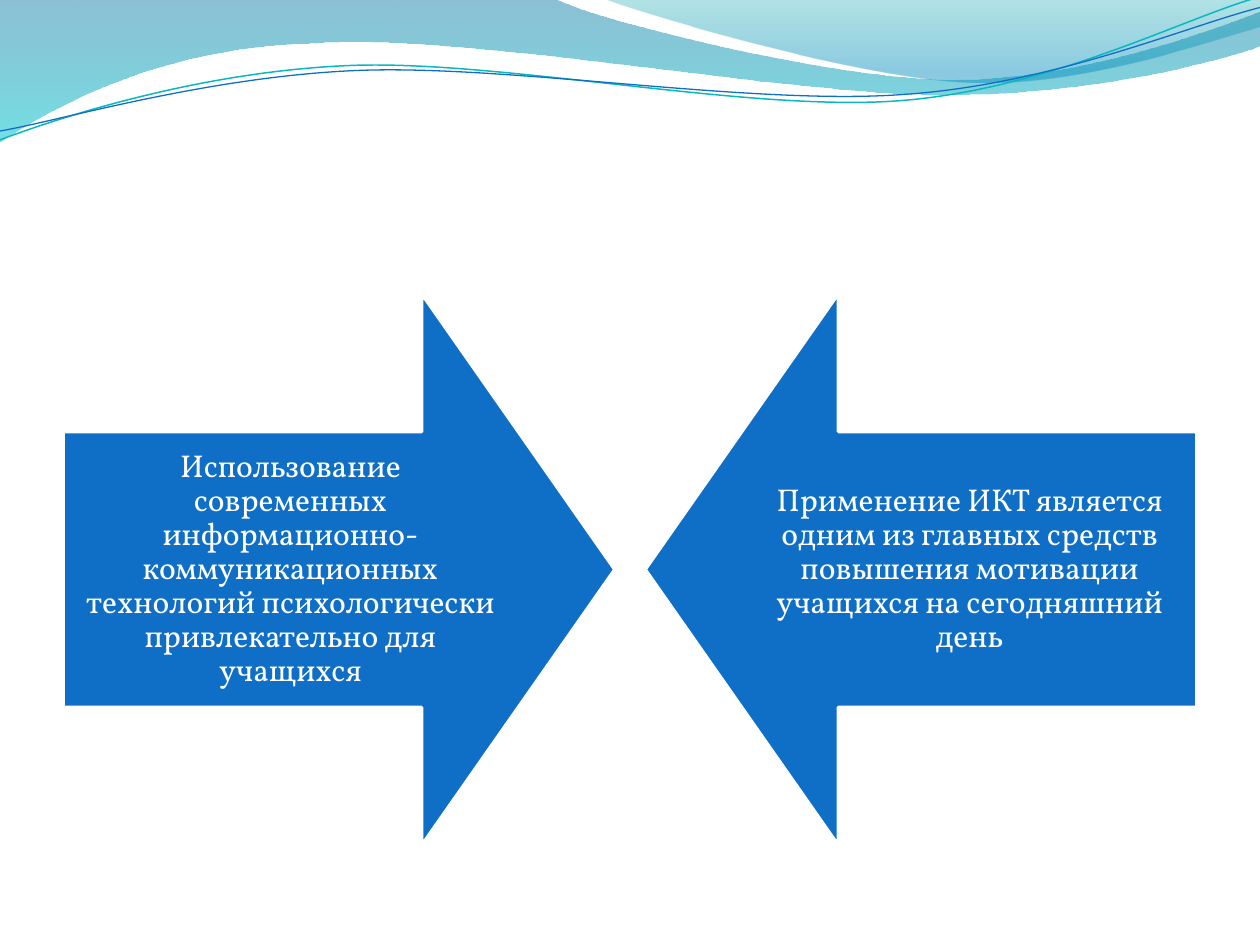
from math import cos, radians, sin

from pptx import Presentation
from pptx.dml.color import RGBColor
from pptx.enum.shapes import MSO_SHAPE as Shape
from pptx.enum.text import MSO_ANCHOR as Anchor, PP_ALIGN as Align
from pptx.oxml.ns import qn
from pptx.util import Inches, Pt
from lxml.etree import SubElement

WIDTH, HEIGHT = 10, 7.5
BLUE, WHITE = "0F6FC6", "FFFFFF"

# Each outline is a start point followed by segments: 1 point makes a line, 3 a Bezier curve
WAVES = [
    ([[(0, 0)], [(4.4, -0.01)], [(4.76, 0.17), (6.64, 0.63), (7.58, 0.63)],
      [(8.53, 0.63), (9.58, 0.26), (10, 0.09)], [(10.01, 0.36)],
      [(9.83, 0.44), (8.7, 0.76), (7.46, 0.75)],
      [(6.22, 0.75), (3.82, 0.28), (2.57, 0.34)],
      [(1.29, 0.36), (0.46, 0.83), (-0.01, 1.13)], [(0, 0)]],
     [(0, "0074A1", 45), (1, "00C6CF", 55)]),
    ([[(4.79, -0.01)], [(5.09, 0.11), (6.82, 0.62), (7.69, 0.65)],
      [(8.56, 0.69), (9.61, 0.32), (10, 0.21)], [(10, 0)], [(4.79, -0.01)]],
     [(0, "00A1A9", 30), (0.8, "008BBF", 45)]),
]
# Strands are given as they lie on the slide, each with the centre of its tilt
TILT = 2.7
STRANDS = [
    ([[(0, 1.11)], [(0.48, 0.93), (1.58, 0.57), (2.77, 0.52)],
      [(3.95, 0.47), (5.93, 0.89), (7.13, 0.8)],
      [(8.33, 0.71), (9.38, 0.15), (9.98, -0.02)]],
     (4.99, 0.57), "0AB8BF", 0.85),
    ([[(0, 1.04)], [(0.47, 0.96), (1.64, 0.61), (2.83, 0.56)],
      [(4.03, 0.51), (5.97, 0.84), (7.17, 0.75)],
      [(8.36, 0.67), (9.41, 0.21), (10, 0.06)]],
     (5, 0.59), BLUE, 0.75),
]

# Arrows mirror each other about the middle of the slide
MARGIN = 0.05 * WIDTH
ARROW = 4.38
ARROW_TOP = 2.33
TEXT_WIDTH, TEXT_HEIGHT = 3.61, ARROW / 2
TEXT_TOP = ARROW_TOP + ARROW / 4
ARGUMENTS = [
    (270, MARGIN, MARGIN,
     "Использование современных информационно-коммуникационных технологий "
     "психологически привлекательно для учащихся"),
    (90, WIDTH - MARGIN - ARROW, WIDTH - MARGIN - TEXT_WIDTH,
     "Применение ИКТ является одним из главных средств повышения мотивации "
     "учащихся на сегодняшний день"),
]


def color(value):
    return RGBColor.from_string(value)


def apply(target, values):
    for name, value in values.items():
        setattr(target, name, value)


def turn(point, center, degrees):
    angle = radians(degrees)
    dx, dy = point[0] - center[0], point[1] - center[1]
    return (center[0] + dx * cos(angle) - dy * sin(angle),
            center[1] + dx * sin(angle) + dy * cos(angle))


def add_outline(page, outline, close):
    points = [(Inches(x), Inches(y)) for segment in outline for x, y in segment]
    builder = page.shapes.build_freeform(*points[0])
    builder.add_line_segments(points[1:], close=close)
    shape = builder.convert_to_shape()
    shape.shadow.inherit = False
    # Join the three points of each curve into one Bezier segment
    lines = list(shape._element.spPr.iter(qn("a:lnTo")))
    for segment in outline[1:]:
        group, lines = lines[:len(segment)], lines[len(segment):]
        if len(group) == 3:
            group[0].tag = qn("a:cubicBezTo")
            for line in group[1:]:
                group[0].append(line[0])
                line.getparent().remove(line)
    return shape


def add_wave(page, outline, stops):
    wave = add_outline(page, outline, True)
    wave.line.fill.background()
    wave.fill.gradient()
    wave.fill.gradient_angle = 270
    for stop, (position, tint, _) in zip(wave.fill.gradient_stops, stops):
        stop.position = position
        stop.color.rgb = color(tint)
    # Transparency of each stop
    for node, (_, _, opacity) in zip(wave._element.spPr.iter(qn("a:srgbClr")), stops):
        SubElement(node, qn("a:alpha")).set("val", str(opacity * 1000))


def add_strand(page, outline, center, tint, width):
    level = [[turn(point, center, TILT) for point in segment] for segment in outline]
    strand = add_outline(page, level, False)
    strand.rotation = 360 - TILT
    strand.fill.background()
    strand.line.color.rgb = color(tint)
    strand.line.width = Pt(width)


def add_arrow(page, left, rotation):
    arrow = page.shapes.add_shape(Shape.DOWN_ARROW, Inches(left), Inches(ARROW_TOP),
                                  Inches(ARROW), Inches(ARROW))
    arrow.rotation = rotation
    arrow.adjustments[0], arrow.adjustments[1] = 0.5, 0.35
    arrow.shadow.inherit = False
    arrow.fill.solid()
    arrow.fill.fore_color.rgb = color(BLUE)
    arrow.line.color.rgb = color(WHITE)
    arrow.line.width = Pt(2)


def add_label(page, left, text):
    box = page.shapes.add_textbox(Inches(left), Inches(TEXT_TOP),
                                  Inches(TEXT_WIDTH), Inches(TEXT_HEIGHT))
    frame = box.text_frame
    apply(frame, {"word_wrap": True, "vertical_anchor": Anchor.MIDDLE})
    apply(frame, {f"margin_{side}": Inches(0.14)
                  for side in ("left", "top", "right", "bottom")})
    para = frame.paragraphs[0]
    apply(para, {"alignment": Align.CENTER, "line_spacing": 0.9})
    span = para.add_run()
    span.text = text
    apply(span.font, {"name": "Vollkorn", "size": Pt(18)})
    span.font.color.rgb = color(WHITE)


def main():
    deck = Presentation()
    apply(deck, {"slide_width": Inches(WIDTH), "slide_height": Inches(HEIGHT)})
    page = deck.slides.add_slide(deck.slide_layouts[6])

    # Decoration along the top
    for outline, stops in WAVES:
        add_wave(page, outline, stops)
    for strand in STRANDS:
        add_strand(page, *strand)

    # Two arrows that meet in the middle
    for rotation, arrow_left, text_left, text in ARGUMENTS:
        add_arrow(page, arrow_left, rotation)
        add_label(page, text_left, text)

    deck.save("out.pptx")


if __name__ == "__main__":
    main()
